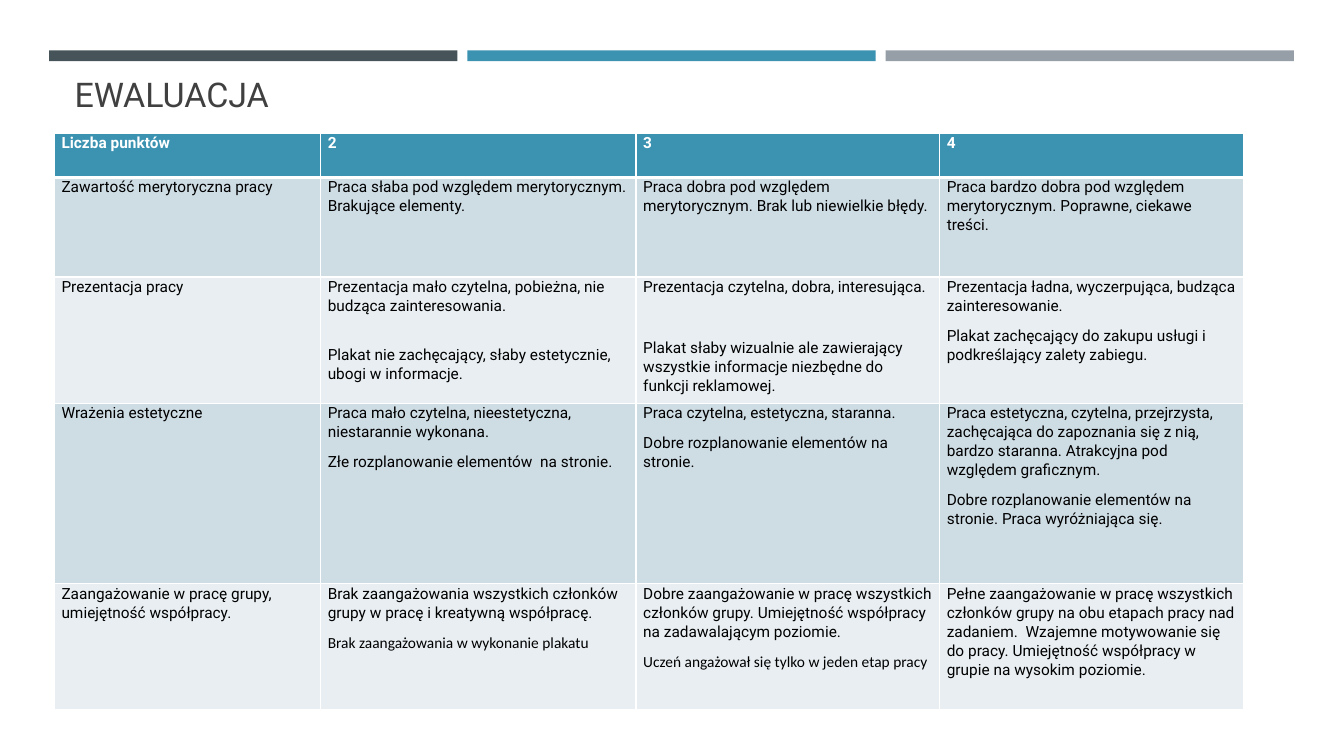
"""Build the evaluation rubric slide."""
from lxml import etree
from pptx import Presentation
from pptx.dml.color import RGBColor
from pptx.enum.shapes import MSO_SHAPE
from pptx.enum.text import MSO_ANCHOR
from pptx.oxml.ns import qn
from pptx.util import Cm, Pt

RECTANGLE = MSO_SHAPE.RECTANGLE
BOTTOM = MSO_ANCHOR.BOTTOM
COLORS = {
    "slate": "465359", "teal": "3B92B1", "grey": "969FA7", "title": "404040",
    "white": "FFFFFF", "black": "000000", "band": "CEDCE4", "pale": "E8EEF2",
}
BAR_COLORS = ["slate", "teal", "grey"]
BAR_LEFT, BAR_TOP, BAR_WIDTH, BAR_HEIGHT, BAR_STEP = 1.24, 1.27, 10.29, 0.27, 10.54
COLUMN_WIDTHS = [6.71, 7.95, 7.65, 7.65]
ROW_HEIGHTS = [1.12, 2.51, 3.18, 4.55, 3.18]
CELL_MARGINS = {"margin_left": Cm(0.18), "margin_right": Cm(0.18),
                "margin_top": 0, "margin_bottom": 0}
CELL_SPACING = {"line_spacing": 1.06, "space_after": Pt(8)}
RUBRIC = [
    [["Liczba punktów"], ["2"], ["3"], ["4"]],
    [["Zawartość merytoryczna pracy"],
     ["Praca słaba pod względem merytorycznym. Brakujące elementy."],
     ["Praca dobra pod względem merytorycznym. Brak lub niewielkie błędy."],
     ["Praca bardzo dobra pod względem merytorycznym. Poprawne, ciekawe treści."]],
    [["Prezentacja pracy"],
     ["Prezentacja mało czytelna, pobieżna, nie budząca zainteresowania.",
      "Plakat nie zachęcający, słaby estetycznie, ubogi w informacje."],
     ["Prezentacja czytelna, dobra, interesująca.",
      "Plakat słaby wizualnie ale zawierający wszystkie informacje niezbędne "
      "do funkcji reklamowej."],
     ["Prezentacja ładna, wyczerpująca, budząca zainteresowanie.",
      "Plakat zachęcający do zakupu usługi i podkreślający zalety zabiegu."]],
    [["Wrażenia estetyczne"],
     ["Praca mało czytelna, nieestetyczna, niestarannie wykonana.",
      "Złe rozplanowanie elementów  na stronie."],
     ["Praca czytelna, estetyczna, staranna.",
      "Dobre rozplanowanie elementów na stronie."],
     ["Praca estetyczna, czytelna, przejrzysta, zachęcająca do zapoznania się z nią, "
      "bardzo staranna. Atrakcyjna pod względem graficznym.",
      "Dobre rozplanowanie elementów na stronie. Praca wyróżniająca się."]],
    [["Zaangażowanie w pracę grupy, umiejętność współpracy."],
     ["Brak zaangażowania wszystkich członków grupy w pracę i kreatywną współpracę.",
      "Brak zaangażowania w wykonanie plakatu"],
     ["Dobre zaangażowanie w pracę wszystkich członków grupy. Umiejętność współpracy "
      "na zadawalającym poziomie.",
      "Uczeń angażował się tylko w jeden etap pracy"],
     ["Pełne zaangażowanie w pracę wszystkich członków grupy na obu etapach pracy nad "
      "zadaniem.  Wzajemne motywowanie się do pracy. Umiejętność współpracy w grupie "
      "na wysokim poziomie."]],
]
POSTER_GAPS = {(2, 1): 13.5, (2, 2): 22}
GROUP_ROW = 4


def apply(target, values):
    for name, value in values.items():
        setattr(target, name, value)


def color(name):
    return RGBColor.from_string(COLORS[name])


class RubricSlide:
    def __init__(self, slide):
        self.slide = slide
        self.font = "Roboto"
        self.note_font = "Calibri"

    def add_text(self, paragraph, text, ink, spacing, font):
        apply(paragraph, spacing)
        run = paragraph.add_run()
        run.text = text
        apply(run.font, font)
        run.font.color.rgb = color(ink)

    def bar(self, left, fill):
        bar = self.slide.shapes.add_shape(
            RECTANGLE, Cm(left), Cm(BAR_TOP), Cm(BAR_WIDTH), Cm(BAR_HEIGHT))
        bar.shadow.inherit = False
        bar.fill.solid()
        bar.fill.fore_color.rgb = color(fill)
        bar.line.fill.background()

    def title(self, text):
        heading = self.slide.shapes.add_textbox(Cm(1.63), Cm(1.96), Cm(30.63), Cm(1.07))
        frame = heading.text_frame
        apply(frame, {"word_wrap": True, "vertical_anchor": BOTTOM})
        self.add_text(frame.paragraphs[0], text, "title", {"line_spacing": 0.9},
                      {"name": self.font, "size": Pt(24.3)})

    def borders(self, cell, row):
        widths = {"lnL": 1, "lnR": 1, "lnT": 3 if row == 1 else 1, "lnB": 3 if row == 0 else 1}
        properties = cell._tc.get_or_add_tcPr()
        for position, (side, width) in enumerate(widths.items()):
            border = etree.Element(qn(f"a:{side}"), w=str(Pt(width)))
            solid = etree.SubElement(border, qn("a:solidFill"))
            etree.SubElement(solid, qn("a:srgbClr"), val=COLORS["white"])
            properties.insert(position, border)

    def cell(self, cell, row, column, texts):
        header = row == 0
        apply(cell, CELL_MARGINS)
        cell.fill.solid()
        cell.fill.fore_color.rgb = color("teal" if header else "band" if row % 2 else "pale")
        self.borders(cell, row)
        frame = cell.text_frame
        for index, text in enumerate(texts):
            paragraph = frame.add_paragraph() if index else frame.paragraphs[0]
            spacing = dict(CELL_SPACING)
            if index and (row, column) in POSTER_GAPS:
                spacing["space_before"] = Pt(POSTER_GAPS[row, column])
            is_note = index and row == GROUP_ROW
            self.add_text(paragraph, text, "white" if header else "black", spacing,
                          {"name": self.note_font if is_note else self.font,
                           "size": Pt(11), "bold": header})

    def table(self, rubric):
        table = self.slide.shapes.add_table(
            len(ROW_HEIGHTS), len(COLUMN_WIDTHS), Cm(1.37), Cm(3.35),
            Cm(sum(COLUMN_WIDTHS)), Cm(sum(ROW_HEIGHTS))).table
        apply(table, {"first_row": False, "horz_banding": False})
        for column, width in zip(table.columns, COLUMN_WIDTHS):
            column.width = Cm(width)
        for row, height in zip(table.rows, ROW_HEIGHTS):
            row.height = Cm(height)
        for row, criteria in enumerate(rubric):
            for column, texts in enumerate(criteria):
                self.cell(table.cell(row, column), row, column, texts)


def main():
    presentation = Presentation()
    apply(presentation, {"slide_width": Cm(33.87), "slide_height": Cm(19.05)})
    evaluation = RubricSlide(presentation.slides.add_slide(presentation.slide_layouts[6]))
    for index, fill in enumerate(BAR_COLORS):
        evaluation.bar(BAR_LEFT + index * BAR_STEP, fill)
    evaluation.title("EWALUACJA")
    evaluation.table(RUBRIC)
    presentation.save("out.pptx")


if __name__ == "__main__":
    main()
